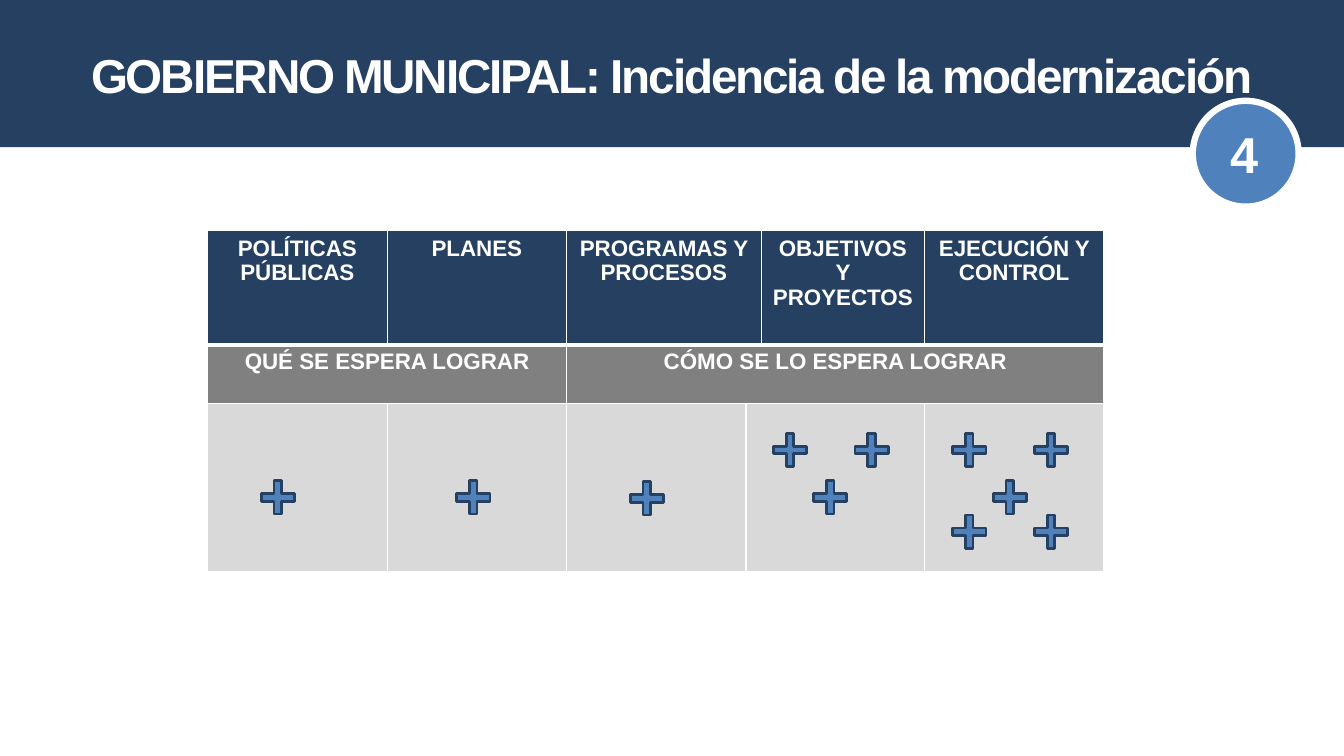
from dataclasses import dataclass
from typing import Optional

import pptx
import pptx.dml.color
import pptx.enum.shapes
import pptx.enum.text
import pptx.oxml
import pptx.oxml.ns
import pptx.util

EMU_PER_PX = 9144
FONT = "Arial"
COLORS = {
    "navy": "254061",
    "blue": "4F81BD",
    "gray": "808080",
    "silver": "D9D9D9",
    "white": "FFFFFF",
}
SHAPES = pptx.enum.shapes.MSO_SHAPE
ALIGN = pptx.enum.text.PP_ALIGN

SLIDE_WIDTH, SLIDE_HEIGHT = 1333, 750
BANNER_HEIGHT = 146
TABLE_LEFT, TABLE_TOP = 206, 229
COLUMN_WIDTHS = [178, 178, 178, 15, 162, 178]
ROW_HEIGHTS = [113, 58, 167]
PLUS_SIZE = 33
PLUS_ARM = 0.388


@dataclass(frozen=True)
class Box:
    left: int
    top: int
    width: int
    height: int


@dataclass(frozen=True)
class TableCell:
    row: int
    column: int
    fill: str
    text: str = ""
    span: int = 1


@dataclass(frozen=True)
class Plus:
    left: int
    top: int


CELLS = [
    TableCell(0, 0, "navy", "POLÍTICAS PÚBLICAS"),
    TableCell(0, 1, "navy", "PLANES"),
    TableCell(0, 2, "navy", "PROGRAMAS Y PROCESOS", 2),
    TableCell(0, 4, "navy", "OBJETIVOS Y PROYECTOS"),
    TableCell(0, 5, "navy", "EJECUCIÓN Y CONTROL"),
    TableCell(1, 0, "gray", "QUÉ SE ESPERA LOGRAR", 2),
    TableCell(1, 2, "gray", "CÓMO SE LO ESPERA LOGRAR", 4),
    TableCell(2, 0, "silver"),
    TableCell(2, 1, "silver"),
    TableCell(2, 2, "silver"),
    TableCell(2, 3, "silver", span=2),
    TableCell(2, 5, "silver"),
]
PLUSES = [
    Plus(259, 477),
    Plus(453, 477),
    Plus(625, 478),
    Plus(767, 430),
    Plus(848, 430),
    Plus(807, 477),
    Plus(945, 430),
    Plus(1026, 430),
    Plus(985, 477),
    Plus(945, 511),
    Plus(1026, 511),
]


def px(length: int) -> pptx.util.Emu:
    return pptx.util.Emu(length * EMU_PER_PX)


def color(name: str) -> pptx.dml.color.RGBColor:
    return pptx.dml.color.RGBColor.from_string(COLORS[name])


def write_text(text_frame, text: str, size: int, alignment) -> None:
    paragraph = text_frame.paragraphs[0]
    paragraph.text = text
    paragraph.alignment = alignment
    paragraph.font.name = FONT
    paragraph.font.size = pptx.util.Pt(size)
    paragraph.font.bold = True
    paragraph.font.color.rgb = color("white")


def add_text(slide, box: Box, text: str, size: int, alignment, wrap: bool):
    shape = slide.shapes.add_textbox(*map(px, (box.left, box.top, box.width, box.height)))
    shape.text_frame.word_wrap = wrap
    write_text(shape.text_frame, text, size, alignment)
    return shape


def add_figure(slide, kind, box: Box, fill: str, line: Optional[str] = None, line_width: float = 0):
    shape = slide.shapes.add_shape(kind, *map(px, (box.left, box.top, box.width, box.height)))
    shape.shadow.inherit = False
    shape.fill.solid()
    shape.fill.fore_color.rgb = color(fill)
    if line:
        shape.line.color.rgb = color(line)
        shape.line.width = pptx.util.Pt(line_width)
    else:
        shape.line.fill.background()
    return shape


def style_cell(cell, row: int, fill: str) -> None:
    properties = cell._tc.get_or_add_tcPr()
    widths = {"L": 1, "R": 1, "T": 3 if row == 1 else 1, "B": 3 if row == 0 else 1}
    for side, width in widths.items():
        properties.append(pptx.oxml.parse_xml(
            f'<a:ln{side} {pptx.oxml.ns.nsdecls("a")} w="{pptx.util.Pt(width)}">'
            f'<a:solidFill><a:srgbClr val="{COLORS["white"]}"/></a:solidFill></a:ln{side}>'
        ))
    cell.fill.solid()
    cell.fill.fore_color.rgb = color(fill)


def add_policy_table(slide) -> None:
    frame = slide.shapes.add_table(
        len(ROW_HEIGHTS), len(COLUMN_WIDTHS), px(TABLE_LEFT), px(TABLE_TOP),
        px(sum(COLUMN_WIDTHS)), px(sum(ROW_HEIGHTS)),
    )
    table = frame.table
    for column, width in zip(table.columns, COLUMN_WIDTHS):
        column.width = px(width)
    for row, height in zip(table.rows, ROW_HEIGHTS):
        row.height = px(height)
    for item in CELLS:
        last_column = item.column + item.span - 1
        for column in range(item.column, last_column + 1):
            style_cell(table.cell(item.row, column), item.row, item.fill)
        cell = table.cell(item.row, item.column)
        if item.span > 1:
            cell.merge(table.cell(item.row, last_column))
        if item.text:
            write_text(cell.text_frame, item.text, 16, ALIGN.CENTER)


def add_title(slide) -> None:
    add_figure(slide, SHAPES.RECTANGLE, Box(0, 0, SLIDE_WIDTH, BANNER_HEIGHT), "navy")
    title = add_text(
        slide, Box(0, 11, SLIDE_WIDTH, 125),
        "GOBIERNO MUNICIPAL: Incidencia de la modernización", 34, ALIGN.CENTER, True,
    )
    title.text_frame.vertical_anchor = pptx.enum.text.MSO_ANCHOR.MIDDLE
    run = title.text_frame.paragraphs[0].runs[0]
    run._r.get_or_add_rPr().set("spc", "-150")


def main() -> None:
    presentation = pptx.Presentation()
    presentation.slide_width = px(SLIDE_WIDTH)
    presentation.slide_height = px(SLIDE_HEIGHT)
    slide = presentation.slides.add_slide(presentation.slide_layouts[6])
    add_policy_table(slide)
    add_title(slide)
    for plus in PLUSES:
        box = Box(plus.left, plus.top, PLUS_SIZE, PLUS_SIZE)
        shape = add_figure(slide, SHAPES.CROSS, box, "blue", "navy", 2)
        shape.adjustments[0] = PLUS_ARM
    add_figure(slide, SHAPES.OVAL, Box(1183, 100, 105, 105), "blue", "white", 4.5)
    add_text(slide, Box(1211, 117, 48, 71), "4", 36, ALIGN.LEFT, False)
    presentation.save("out.pptx")


if __name__ == "__main__":
    main()
